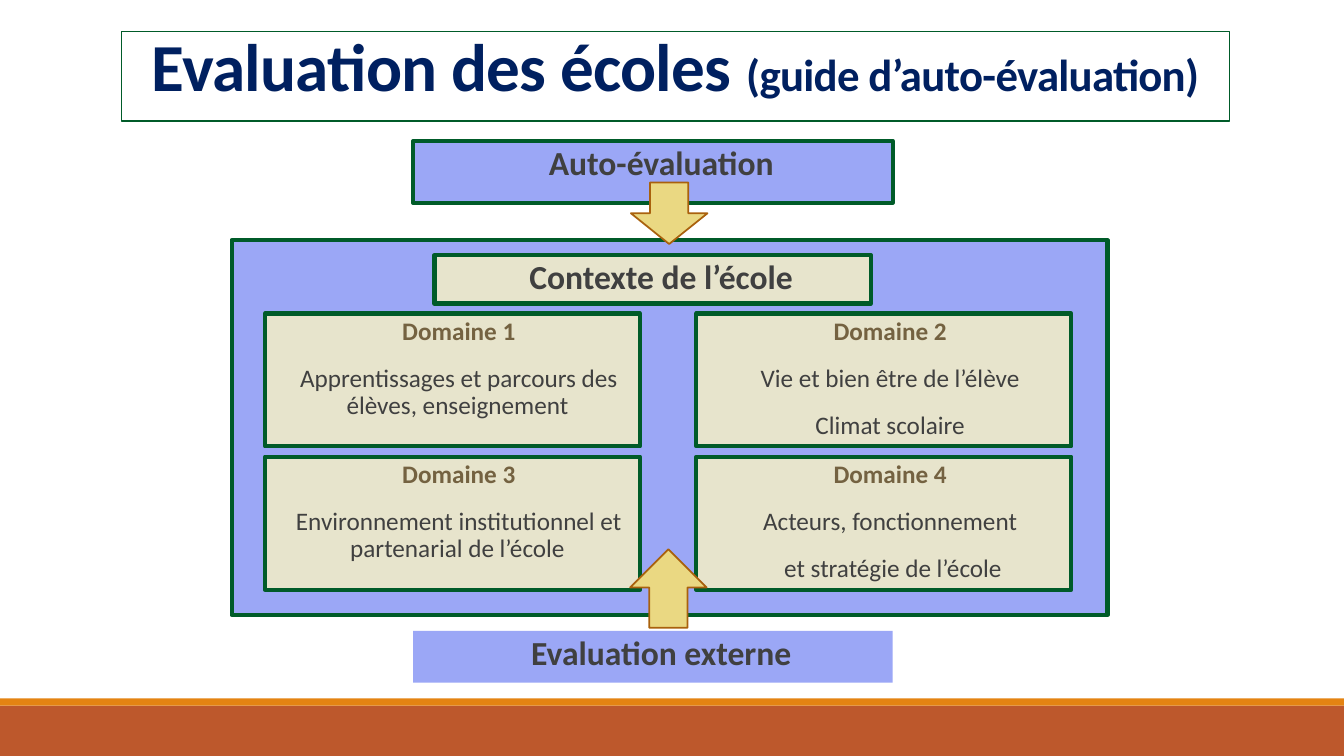
from dataclasses import dataclass

import pptx
import pptx.dml.color
import pptx.enum.shapes
import pptx.enum.text
import pptx.oxml.ns
import pptx.util
from lxml import etree

Cm = pptx.util.Cm
Pt = pptx.util.Pt
RGBColor = pptx.dml.color.RGBColor
Preset = pptx.enum.shapes.MSO_SHAPE
qn = pptx.oxml.ns.qn

FONT = "Calibri"
RUST = RGBColor(0xBD, 0x58, 0x2C)
ORANGE = RGBColor(0xE4, 0x83, 0x12)
PERIWINKLE = RGBColor(0x9B, 0xA7, 0xF6)
CREAM = RGBColor(0xE7, 0xE4, 0xCC)
GREEN = RGBColor(0x00, 0x5B, 0x29)
YELLOW = RGBColor(0xEA, 0xD8, 0x82)
BROWN = RGBColor(0xA9, 0x61, 0x0D)
NAVY = RGBColor(0x00, 0x20, 0x60)
GREY = RGBColor(0x40, 0x40, 0x40)
UMBER = RGBColor(0x74, 0x62, 0x41)


@dataclass
class Line:
    text: str
    size: int = 24
    color: RGBColor = GREY
    bold: bool = True


@dataclass
class Block:
    left: float
    top: float
    width: float
    height: float
    fill: RGBColor
    outline: RGBColor | None = None
    weight: float = 3
    preset: Preset = Preset.RECTANGLE
    lines: tuple[Line, ...] = ()
    side_inset: float = 0


def add_span(para, text: str, size: float, color: RGBColor, bold: bool):
    span = para.add_run()
    span.text = text
    span.font.name = FONT
    span.font.size = Pt(size)
    span.font.bold = bold
    span.font.color.rgb = color
    return span


def add_blank_bullet(para) -> None:
    """Hang the paragraph on a blank bullet, as the outline style does."""
    properties = para._p.get_or_add_pPr()
    properties.set("marL", str(Cm(0.25)))
    properties.set("indent", str(-Cm(0.25)))
    bullet_color = etree.SubElement(properties, qn("a:buClr"))
    etree.SubElement(bullet_color, qn("a:srgbClr"), val=str(ORANGE))
    etree.SubElement(properties, qn("a:buChar"), char=" ")


def write_lines(box, lines: tuple[Line, ...], side_inset: float) -> None:
    frame = box.text_frame
    frame.word_wrap = True
    frame.vertical_anchor = pptx.enum.text.MSO_ANCHOR.TOP
    frame.margin_left = frame.margin_right = Cm(side_inset)
    frame.margin_top = frame.margin_bottom = Cm(0.13)
    for index, line in enumerate(lines):
        para = frame.add_paragraph() if index else frame.paragraphs[0]
        para.alignment = pptx.enum.text.PP_ALIGN.CENTER
        para.line_spacing = 0.9
        para.space_before = Pt(12)
        para.space_after = Pt(2)
        add_blank_bullet(para)
        add_span(para, line.text, line.size, line.color, line.bold)


def add_block(page, block: Block) -> None:
    box = page.shapes.add_shape(block.preset, Cm(block.left), Cm(block.top),
                                Cm(block.width), Cm(block.height))
    box.shadow.inherit = False
    box.fill.solid()
    box.fill.fore_color.rgb = block.fill
    if block.outline is None:
        box.line.fill.background()
    else:
        box.line.color.rgb = block.outline
        box.line.width = Pt(block.weight)
    if block.lines:
        write_lines(box, block.lines, block.side_inset)


def format_title(title) -> None:
    title.left, title.top, title.width, title.height = Cm(3.05), Cm(0.79), Cm(27.94), Cm(2.26)
    title.line.color.rgb = GREEN
    title.line.width = Pt(0.75)
    frame = title.text_frame
    frame.word_wrap = True
    frame.auto_size = pptx.enum.text.MSO_AUTO_SIZE.NONE
    frame.vertical_anchor = pptx.enum.text.MSO_ANCHOR.TOP
    para = frame.paragraphs[0]
    para.alignment = pptx.enum.text.PP_ALIGN.CENTER
    para.line_spacing = 0.85
    for text, size in (("Evaluation des écoles ", 48), ("(guide d’auto-évaluation)", 32)):
        span = add_span(para, text, size, NAVY, True)
        span.font._element.set("spc", "-50")


SLIDE_WIDTH, SLIDE_HEIGHT = 33.87, 19.05

FOOTER_BANDS = (
    Block(0, 17.78, SLIDE_WIDTH, 1.27, RUST),
    Block(0, 17.6, SLIDE_WIDTH, 0.18, ORANGE),
)
STAGES = (
    Block(10.41, 3.56, 12.09, 1.55, PERIWINKLE, GREEN,
          lines=(Line("Auto-évaluation"),), side_inset=0.25),
    Block(5.84, 6.05, 22.07, 9.45, PERIWINKLE, GREEN),
    Block(10.41, 15.9, 12.09, 1.3, PERIWINKLE, lines=(Line("Evaluation externe"),)),
    Block(10.95, 6.43, 11, 1.22, CREAM, GREEN, lines=(Line("Contexte de l’école"),)),
)
ARROWS = (
    Block(15.88, 13.84, 1.93, 1.98, YELLOW, BROWN, 1.25, Preset.UP_ARROW),
    Block(15.9, 4.6, 1.93, 1.55, YELLOW, BROWN, 1.25, Preset.DOWN_ARROW),
)

# Domains, in reading order on a grid of two columns
DOMAINS = (
    ("Apprentissages et parcours des élèves, enseignement",),
    ("Vie et bien être de l’élève", "Climat scolaire"),
    ("Environnement institutionnel et partenarial de l’école",),
    ("Acteurs, fonctionnement", " et stratégie de l’école"),
)
GRID_LEFT, GRID_TOP = 6.68, 7.9
COLUMN_STEP, ROW_STEP = 10.87, 3.61


def domain_block(index: int, topics: tuple[str, ...]) -> Block:
    row, column = divmod(index, 2)
    heading = Line(f"Domaine {index + 1}", 18, UMBER)
    body = tuple(Line(topic, 18, bold=False) for topic in topics)
    return Block(GRID_LEFT + column * COLUMN_STEP, GRID_TOP + row * ROW_STEP,
                 9.45, 3.35, CREAM, GREEN, lines=(heading, *body))


def main() -> None:
    deck = pptx.Presentation()
    deck.slide_width, deck.slide_height = Cm(SLIDE_WIDTH), Cm(SLIDE_HEIGHT)
    page = deck.slides.add_slide(deck.slide_layouts.get_by_name("Title Only"))
    format_title(page.shapes.title)

    # Arrows come last so that they lie over the boxes
    domains = tuple(domain_block(index, topics) for index, topics in enumerate(DOMAINS))
    for block in FOOTER_BANDS + STAGES + domains + ARROWS:
        add_block(page, block)

    deck.save("out.pptx")


if __name__ == "__main__":
    main()
